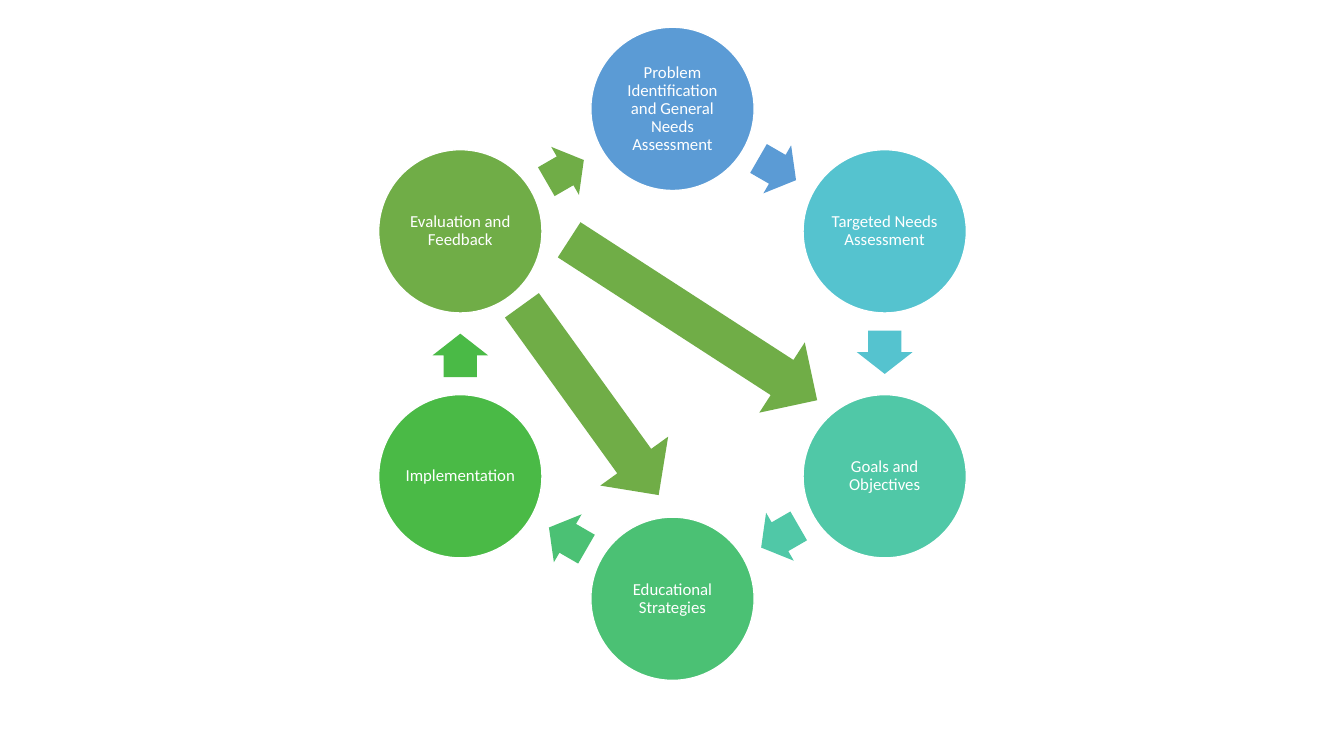
import math

from pptx import Presentation
from pptx.dml.color import RGBColor
from pptx.enum.shapes import MSO_SHAPE
from pptx.enum.text import MSO_ANCHOR, PP_ALIGN
from pptx.util import Inches, Pt

OVAL = MSO_SHAPE.OVAL
RIGHT_ARROW = MSO_SHAPE.RIGHT_ARROW
DOWN_ARROW = MSO_SHAPE.DOWN_ARROW
MIDDLE = MSO_ANCHOR.MIDDLE
CENTER = PP_ALIGN.CENTER

COLORS = {
    "white": "FFFFFF",
    "problem": "5B9BD5",
    "needs": "55C3CF",
    "goals": "50C8A7",
    "strategies": "4BC174",
    "implementation": "4ABA46",
    "evaluation": "70AD47",
}

# Steps run clockwise from the top
STEPS = [
    ("Problem Identification and General Needs Assessment", "problem"),
    ("Targeted Needs Assessment", "needs"),
    ("Goals and Objectives", "goals"),
    ("Educational Strategies", "strategies"),
    ("Implementation", "implementation"),
    ("Evaluation and Feedback", "evaluation"),
]

# Feedback arrows: center x, center y, length, rotation
FEEDBACK = [
    (6.875, 3.175, 2.93, 302.9),
    (5.855, 3.97, 2.32, 324.2),
]

CYCLE_X, CYCLE_Y, CYCLE_RADIUS = 6.67, 3.51, 2.43
STEP_SIZE = 1.62
ARROW_LENGTH, ARROW_WIDTH = 0.43, 0.55
ARROW_SETBACK = 0.015
FEEDBACK_WIDTH = 0.83


def rgb(color):
    return RGBColor.from_string(COLORS[color])


def add_centered(slide, kind, x, y, width, height, color, rotation=0):
    """Add a filled shape without outline, centered on x, y."""
    shape = slide.shapes.add_shape(
        kind, Inches(x - width / 2), Inches(y - height / 2),
        Inches(width), Inches(height))
    shape.rotation = rotation
    shape.shadow.inherit = False
    shape.fill.solid()
    shape.fill.fore_color.rgb = rgb(color)
    shape.line.fill.background()
    return shape


def add_step(slide, angle, label, color):
    x = CYCLE_X + CYCLE_RADIUS * math.cos(angle)
    y = CYCLE_Y + CYCLE_RADIUS * math.sin(angle)
    step = add_centered(slide, OVAL, x, y, STEP_SIZE, STEP_SIZE, color)
    step.line.color.rgb = rgb("white")
    step.line.width = Pt(1)

    frame = step.text_frame
    frame.word_wrap = True
    frame.vertical_anchor = MIDDLE
    frame.margin_left = frame.margin_right = Inches(0.02)
    frame.margin_top = frame.margin_bottom = Inches(0.02)
    paragraph = frame.paragraphs[0]
    paragraph.alignment = CENTER
    paragraph.line_spacing = 0.9
    paragraph.space_after = Pt(4.2)
    run = paragraph.add_run()
    run.text = label
    run.font.size = Pt(12)
    run.font.name = "Calibri"
    run.font.color.rgb = rgb("white")


def add_step_arrow(slide, angle, color):
    """Add the arrow halfway between two steps, along the cycle."""
    reach = CYCLE_RADIUS * math.cos(math.pi / len(STEPS))
    heading = angle + math.pi / 2
    x = CYCLE_X + reach * math.cos(angle) - ARROW_SETBACK * math.cos(heading)
    y = CYCLE_Y + reach * math.sin(angle) - ARROW_SETBACK * math.sin(heading)
    arrow = add_centered(slide, RIGHT_ARROW, x, y, ARROW_LENGTH, ARROW_WIDTH,
                         color, math.degrees(heading))
    arrow.adjustments[0] = 0.6
    arrow.adjustments[1] = 0.5


def main():
    prs = Presentation()
    prs.slide_width = Inches(13.33)
    prs.slide_height = Inches(7.5)
    slide = prs.slides.add_slide(prs.slide_layouts[6])

    # Cycle of steps
    turn = 2 * math.pi / len(STEPS)
    for index, (label, color) in enumerate(STEPS):
        angle = index * turn - math.pi / 2
        add_step(slide, angle, label, color)
        add_step_arrow(slide, angle + turn / 2, color)

    # Feedback from evaluation to earlier steps
    for x, y, length, rotation in FEEDBACK:
        add_centered(slide, DOWN_ARROW, x, y, FEEDBACK_WIDTH, length,
                     "evaluation", rotation)

    prs.save("out.pptx")


if __name__ == "__main__":
    main()
